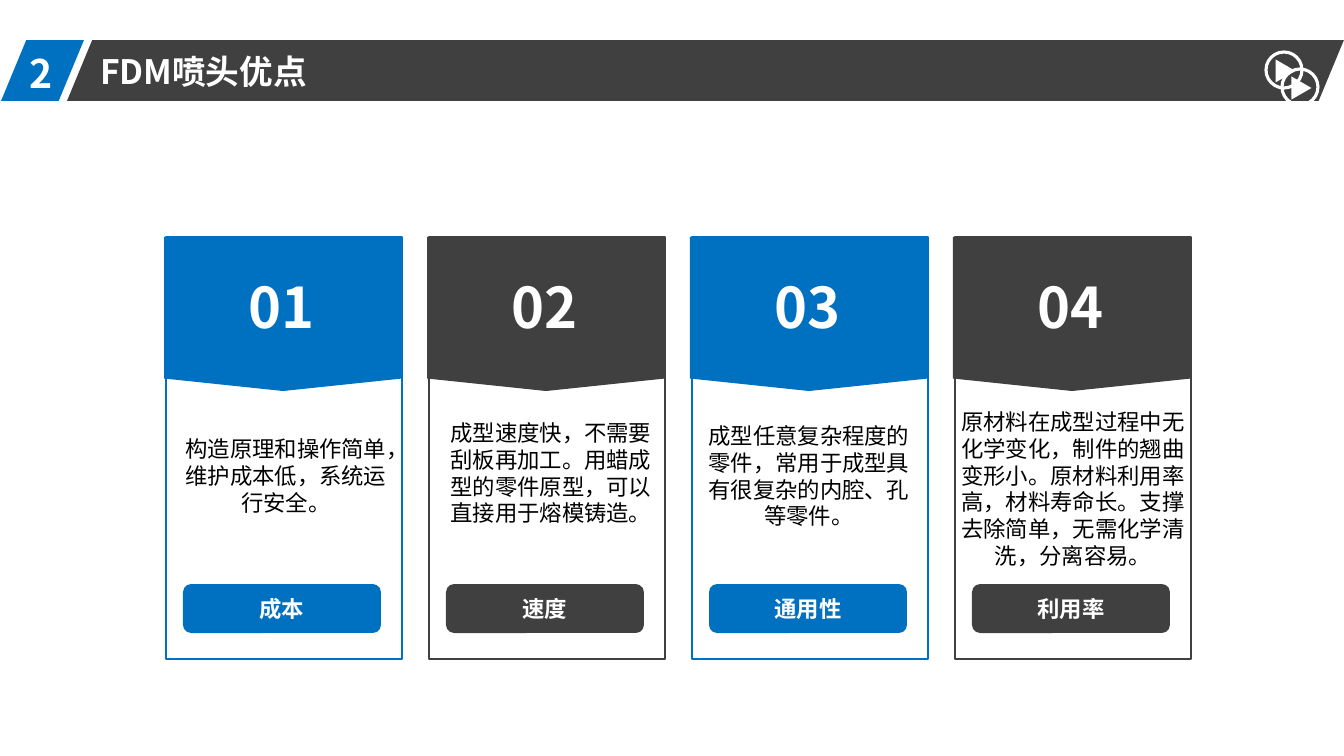
"""Build the slide on the advantages of the FDM nozzle."""
import pptx
import pptx.dml.color
import pptx.enum.shapes
import pptx.enum.text
import pptx.oxml
import pptx.oxml.ns
import pptx.util

SLIDE_SIZE = (1344, 756)
SCALE = 12192000 / 1344
FONT = "Noto Sans CJK SC"
BLUE = pptx.dml.color.RGBColor(0x00, 0x70, 0xC0)
GREY = pptx.dml.color.RGBColor(0x40, 0x40, 0x40)
WHITE = pptx.dml.color.RGBColor(0xFF, 0xFF, 0xFF)
BLACK = pptx.dml.color.RGBColor(0x00, 0x00, 0x00)
SHAPE = pptx.enum.shapes.MSO_SHAPE
ALIGN = pptx.enum.text.PP_ALIGN
ANCHOR = pptx.enum.text.MSO_ANCHOR

SECTION = "2"
TITLE = "FDM喷头优点"
CARDS = [
    ("01", "成本", BLUE, (176, 435, 220, 81),
     "构造原理和操作简单，维护成本低，系统运行安全。"),
    ("02", "速度", GREY, (447, 419, 208, 108),
     "成型速度快，不需要刮板再加工。用蜡成型的零件原型，可以直接用于熔模铸造。"),
    ("03", "通用性", BLUE, (704, 422, 210, 108),
     "成型任意复杂程度的零件，常用于成型具有很复杂的内腔、孔等零件。"),
    ("04", "利用率", GREY, (955, 408, 236, 163),
     "原材料在成型过程中无化学变化，制件的翘曲变形小。原材料利用率高，材料寿命长。"
     "支撑去除简单，无需化学清洗，分离容易。"),
]
CARD_LEFT, CARD_TOP, CARD_PITCH = 166, 237, 263
PLAY_ICONS = [(1266, 52), (1282, 69)]


def px(value):
    return pptx.util.Emu(round(value * SCALE))


def place(box):
    return [px(value) for value in box]


def add_shape(shapes, kind, box, fill=None, line=None, width=2, adjust=None, rotation=0):
    shape = shapes.add_shape(kind, *place(box))
    shape.shadow.inherit = False
    shape.rotation = rotation
    if adjust is not None:
        shape.adjustments[0] = adjust
    if fill is None:
        shape.fill.background()
    else:
        shape.fill.solid()
        shape.fill.fore_color.rgb = fill
    if line is None:
        shape.line.fill.background()
    else:
        shape.line.color.rgb = line
        shape.line.width = pptx.util.Pt(width)
    return shape


def write(shape, text, size, color=WHITE, bold=True, align=ALIGN.LEFT,
          anchor=ANCHOR.TOP, margins=(10, 5)):
    frame = shape.text_frame
    frame.word_wrap = True
    frame.auto_size = pptx.enum.text.MSO_AUTO_SIZE.NONE
    frame.vertical_anchor = anchor
    frame.margin_left = frame.margin_right = px(margins[0])
    frame.margin_top = frame.margin_bottom = px(margins[1])
    paragraph = frame.paragraphs[0]
    paragraph.alignment = align
    paragraph.line_spacing = 1.0
    run = paragraph.add_run()
    run.text = text
    run.font.size = pptx.util.Pt(size)
    run.font.bold = bold
    run.font.color.rgb = color
    run.font.name = FONT
    east_asian = pptx.oxml.parse_xml(
        f'<a:ea {pptx.oxml.ns.nsdecls("a")} typeface="{FONT}"/>')
    run.font._element.find(pptx.oxml.ns.qn("a:latin")).addnext(east_asian)


def add_header(slide):
    shapes = slide.shapes
    for box, color in (((67, 40, 1277, 61), GREY), ((1, 40, 83, 61), BLUE)):
        add_shape(shapes, SHAPE.PARALLELOGRAM, box, color, adjust=0.415)
    write(shapes.add_textbox(*place((20, 44, 70, 57))), SECTION, 28)
    title = shapes.title
    title.left, title.top, title.width, title.height = place((90, 46, 276, 51))
    write(title, TITLE, 24)
    title.element.getparent().append(title.element)


def add_card(shapes, left, number, label, color, body_box, body):
    add_shape(shapes, SHAPE.RECTANGLE, (left, CARD_TOP, 236, 422), WHITE, color)
    length, breadth = 154, 238
    turn = (breadth - length) / 2
    add_shape(shapes, SHAPE.PENTAGON, (left - 2 + turn, CARD_TOP - turn, length, breadth),
              color, adjust=0.081, rotation=90)
    button = add_shape(shapes, SHAPE.ROUNDED_RECTANGLE,
                       (left + 17, CARD_TOP + 347, 198, 49), color, adjust=0.167)
    write(button, label, 16, align=ALIGN.CENTER, anchor=ANCHOR.MIDDLE)
    number_box = shapes.add_textbox(*place((left + 50, CARD_TOP + 31, 132, 78)))
    write(number_box, number, 40, align=ALIGN.CENTER)
    write(shapes.add_textbox(*place(body_box)), body, 16, BLACK, False,
          ALIGN.CENTER, margins=(0, 0))


def add_play_icon(slide, left, top):
    shapes = slide.shapes.add_group_shape().shapes
    add_shape(shapes, SHAPE.OVAL, (left, top, 36, 36), line=WHITE, width=2.25)
    add_shape(shapes, SHAPE.ISOSCELES_TRIANGLE, (left + 8, top + 9, 23, 20),
              WHITE, rotation=90)


def main():
    presentation = pptx.Presentation()
    presentation.slide_width, presentation.slide_height = place(SLIDE_SIZE)
    slide = presentation.slides.add_slide(presentation.slide_layouts[5])
    add_header(slide)
    for index, card in enumerate(CARDS):
        add_card(slide.shapes, CARD_LEFT + index * CARD_PITCH, *card)
    for left, top in PLAY_ICONS:
        add_play_icon(slide, left, top)
    presentation.save("out.pptx")


if __name__ == "__main__":
    main()
